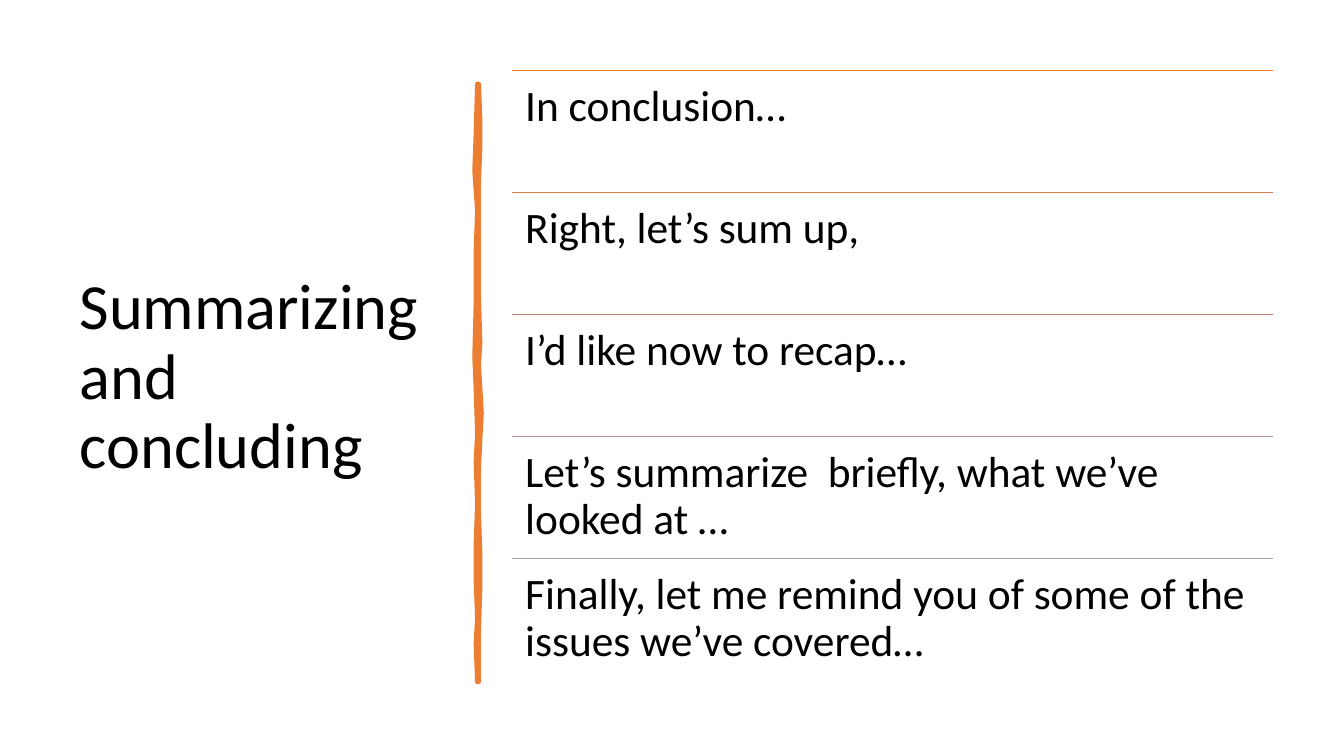
from lxml.etree import SubElement
from pptx import Presentation
from pptx.dml.color import RGBColor
from pptx.enum.shapes import MSO_CONNECTOR
from pptx.enum.text import MSO_ANCHOR, MSO_AUTO_SIZE, PP_ALIGN
from pptx.oxml.ns import qn
from pptx.util import Pt

BLACK = RGBColor(0x00, 0x00, 0x00)
ORANGE = RGBColor(0xED, 0x7D, 0x31)
COPPER = RGBColor(0xD8, 0x7A, 0x51)
ROSE = RGBColor(0xC4, 0x81, 0x70)
TAUPE = RGBColor(0xB4, 0x90, 0x8B)
GRAY = RGBColor(0xA5, 0xA5, 0xA5)
FONT = "Calibri"

LEFT, TOP, WIDTH, PITCH = 365.76, 50.4, 543.6, 87.12
INSET = 9.4

ROWS = [
    ("In conclusion…", ORANGE),
    ("Right, let’s sum up,", COPPER),
    ("I’d like now to recap…", ROSE),
    ("Let’s summarize  briefly, what we’ve looked at …", TAUPE),
    ("Finally, let me remind you of some of the issues we’ve covered…", GRAY),
]

# Edges of the hand-drawn bar, right side down and left side up
BAR = [
    (342, 60.5), (343.2, 85), (343, 105), (342, 130), (342, 212),
    (343, 245), (342, 260), (343.8, 295), (343.4, 314), (342, 335),
    (342, 367), (343.4, 395), (342.6, 420), (342, 450), (342, 486.7),
    (340.6, 486.7), (339.8, 460), (340.6, 441), (339.6, 415), (339.5, 388),
    (340.6, 360), (339.6, 330), (340.6, 310), (340.4, 278), (339.2, 255),
    (340.4, 216), (339.8, 180), (340.6, 150), (339.2, 122), (340.2, 95),
    (340.6, 60.5),
]


def style(frame, text, size):
    frame.text = text
    frame.word_wrap = True
    frame.auto_size = MSO_AUTO_SIZE.NONE
    para = frame.paragraphs[0]
    para.alignment = PP_ALIGN.LEFT
    para.line_spacing = 0.9
    font = para.runs[0].font
    font.name, font.size = FONT, Pt(size)
    font.color.rgb = BLACK


def add_title(slide, text):
    title = slide.shapes.title
    title.left, title.top = Pt(49.7), Pt(50.4)
    title.width, title.height = Pt(269.3), Pt(440)
    style(title.text_frame, text, 46)
    title.text_frame.vertical_anchor = MSO_ANCHOR.MIDDLE


def add_bar(slide):
    pen = slide.shapes.build_freeform(*BAR[0], scale=Pt(1))
    pen.add_line_segments(BAR[1:], close=True)
    bar = pen.convert_to_shape()
    bar.shadow.inherit = False
    bar.fill.solid()
    bar.fill.fore_color.rgb = ORANGE
    bar.line.color.rgb = ORANGE
    bar.line.width = Pt(3.25)
    SubElement(bar.line._get_or_add_ln(), qn("a:round"))


def add_rule(slide, top, color):
    rule = slide.shapes.add_connector(
        MSO_CONNECTOR.STRAIGHT, Pt(LEFT), Pt(top), Pt(LEFT + WIDTH), Pt(top))
    rule.line.color.rgb = color
    rule.line.width = Pt(1)
    SubElement(rule._element.spPr, qn("a:effectLst"))


def add_phrase(slide, top, text):
    box = slide.shapes.add_textbox(Pt(LEFT), Pt(top), Pt(WIDTH), Pt(PITCH))
    frame = box.text_frame
    frame.margin_left = frame.margin_right = Pt(INSET)
    frame.margin_top = frame.margin_bottom = Pt(INSET)
    style(frame, text, 31)


def main():
    deck = Presentation()
    deck.slide_width, deck.slide_height = Pt(960), Pt(540)
    slide = deck.slides.add_slide(deck.slide_layouts[5])

    # Title and divider
    add_title(slide, "Summarizing and concluding")
    add_bar(slide)

    # Ruled list of phrases
    for row, (text, color) in enumerate(ROWS):
        top = TOP + row * PITCH
        add_rule(slide, top, color)
        add_phrase(slide, top, text)

    deck.save("out.pptx")


if __name__ == "__main__":
    main()
